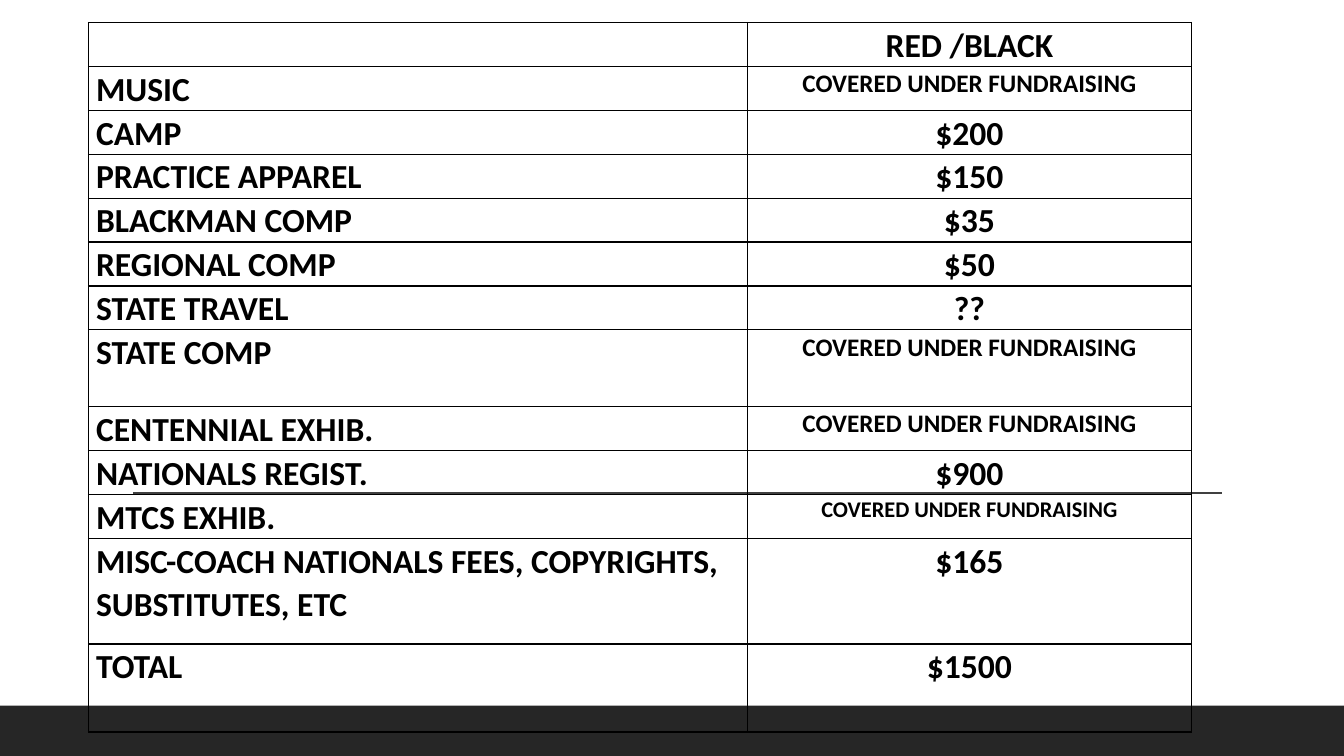
from lxml.etree import SubElement
from pptx import Presentation
from pptx.dml.color import RGBColor
from pptx.enum.shapes import MSO_CONNECTOR, MSO_SHAPE
from pptx.enum.text import PP_ALIGN
from pptx.oxml.ns import qn
from pptx.util import Pt

SLIDE_WIDTH, SLIDE_HEIGHT = 960, 540
COVERED = "COVERED UNDER FUNDRAISING"
LINE_HEIGHT = 31.4
FEES = [
    ("", "RED /BLACK", 24, LINE_HEIGHT),
    ("MUSIC", COVERED, 18, LINE_HEIGHT),
    ("CAMP", "$200", 24, LINE_HEIGHT),
    ("PRACTICE APPAREL", "$150", 24, LINE_HEIGHT),
    ("BLACKMAN COMP", "$35", 24, LINE_HEIGHT),
    ("REGIONAL COMP", "$50", 24, LINE_HEIGHT),
    ("STATE TRAVEL", "??", 24, LINE_HEIGHT),
    ("STATE COMP", COVERED, 18, 54.7),
    ("CENTENNIAL EXHIB.", COVERED, 18, LINE_HEIGHT),
    ("NATIONALS REGIST.", "$900", 24, LINE_HEIGHT),
    ("MTCS EXHIB.", COVERED, 16, LINE_HEIGHT),
    ("MISC-COACH NATIONALS FEES, COPYRIGHTS, SUBSTITUTES, ETC", "$165", 24, 75.6),
    ("TOTAL", "$1500", 24, 2 * LINE_HEIGHT),
]


def color(value):
    return RGBColor.from_string(value)


def write(frame, text, size=24, align=PP_ALIGN.LEFT, ink="000000"):
    paragraph = frame.paragraphs[0]
    paragraph.alignment = align
    paragraph.line_spacing = 1.07
    paragraph.font.size = Pt(size)
    if text:
        run = paragraph.add_run()
        run.text = text
        run.font.name = "Calibri"
        run.font.size = Pt(size)
        run.font.bold = True
        run.font.color.rgb = color(ink)


def add_borders(cell, ink="000000", width=1):
    properties = cell._tc.get_or_add_tcPr()
    for position, side in enumerate(("a:lnL", "a:lnR", "a:lnT", "a:lnB")):
        border = properties.makeelement(qn(side), {"w": str(Pt(width))})
        properties.insert(position, border)
        fill = SubElement(border, qn("a:solidFill"))
        SubElement(fill, qn("a:srgbClr"), val=ink)


def add_footer(slide, left, top, width, height):
    bar = slide.shapes.add_shape(
        MSO_SHAPE.RECTANGLE, Pt(left), Pt(top), Pt(width), Pt(height))
    bar.shadow.inherit = False
    bar.fill.solid()
    bar.fill.fore_color.rgb = color("262626")
    bar.line.fill.background()


def add_rule(slide, left, top, width):
    rule = slide.shapes.add_connector(
        MSO_CONNECTOR.STRAIGHT, Pt(left), Pt(top), Pt(left + width), Pt(top))
    rule.line.color.rgb = color("404040")
    rule.line.width = Pt(1)
    SubElement(rule._element.spPr, qn("a:effectLst"))


def add_fee_table(slide, left, top, width, item_width):
    height = sum(fee[-1] for fee in FEES)
    table = slide.shapes.add_table(
        len(FEES), 2, Pt(left), Pt(top), Pt(width), Pt(height)).table
    table.first_row = False
    table.horz_banding = False
    table.columns[0].width = Pt(item_width)
    table.columns[1].width = Pt(width - item_width)
    for row, (item, price, price_size, row_height) in zip(table.rows, FEES):
        row.height = Pt(row_height)
        item_cell, price_cell = row.cells
        write(item_cell.text_frame, item)
        write(price_cell.text_frame, price, size=price_size, align=PP_ALIGN.CENTER)
        for cell in row.cells:
            cell.margin_left = cell.margin_right = Pt(5.4)
            cell.margin_top = cell.margin_bottom = Pt(0)
            cell.fill.background()
            add_borders(cell)


def main():
    presentation = Presentation()
    presentation.slide_width = Pt(SLIDE_WIDTH)
    presentation.slide_height = Pt(SLIDE_HEIGHT)
    slide = presentation.slides.add_slide(presentation.slide_layouts[6])
    add_footer(slide, 0, 504, SLIDE_WIDTH, 36)
    add_rule(slide, 95, 352.2, 777.6)
    add_fee_table(slide, 63.2, 16, 788, 470.6)
    presentation.save("out.pptx")


if __name__ == "__main__":
    main()
